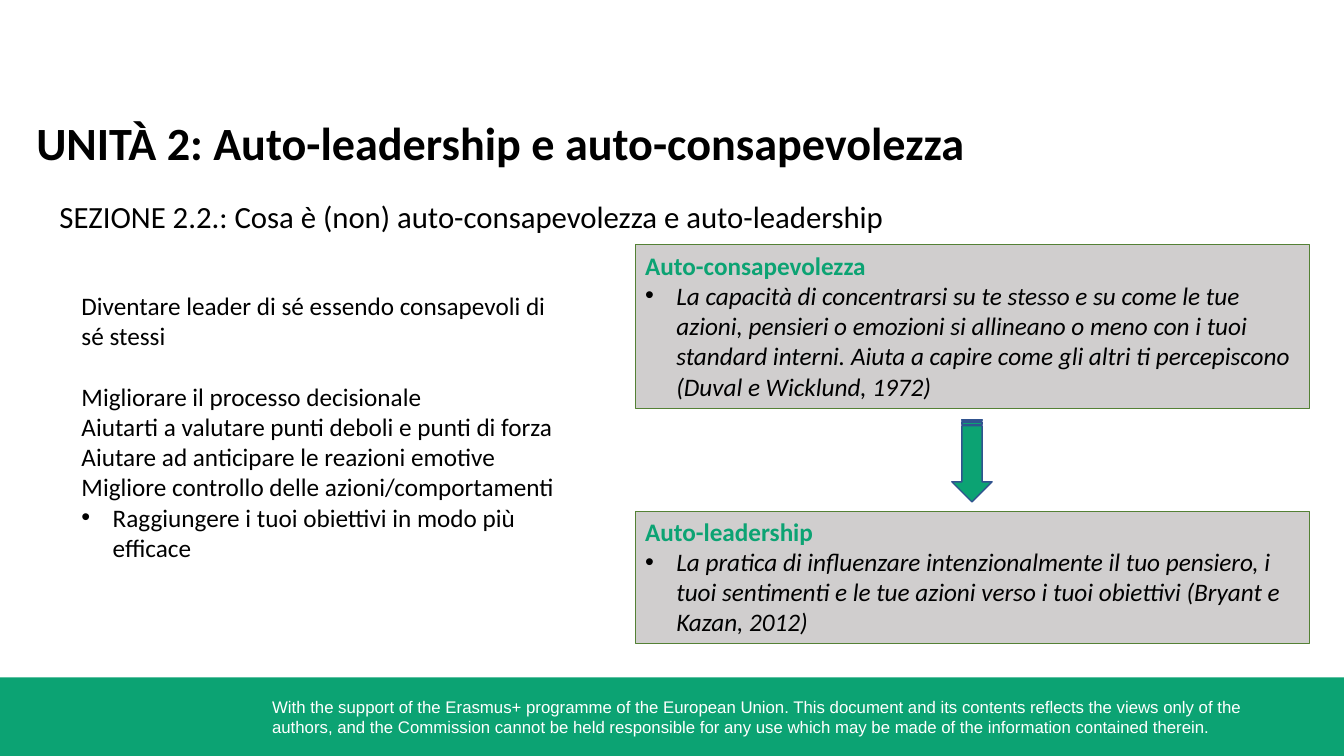
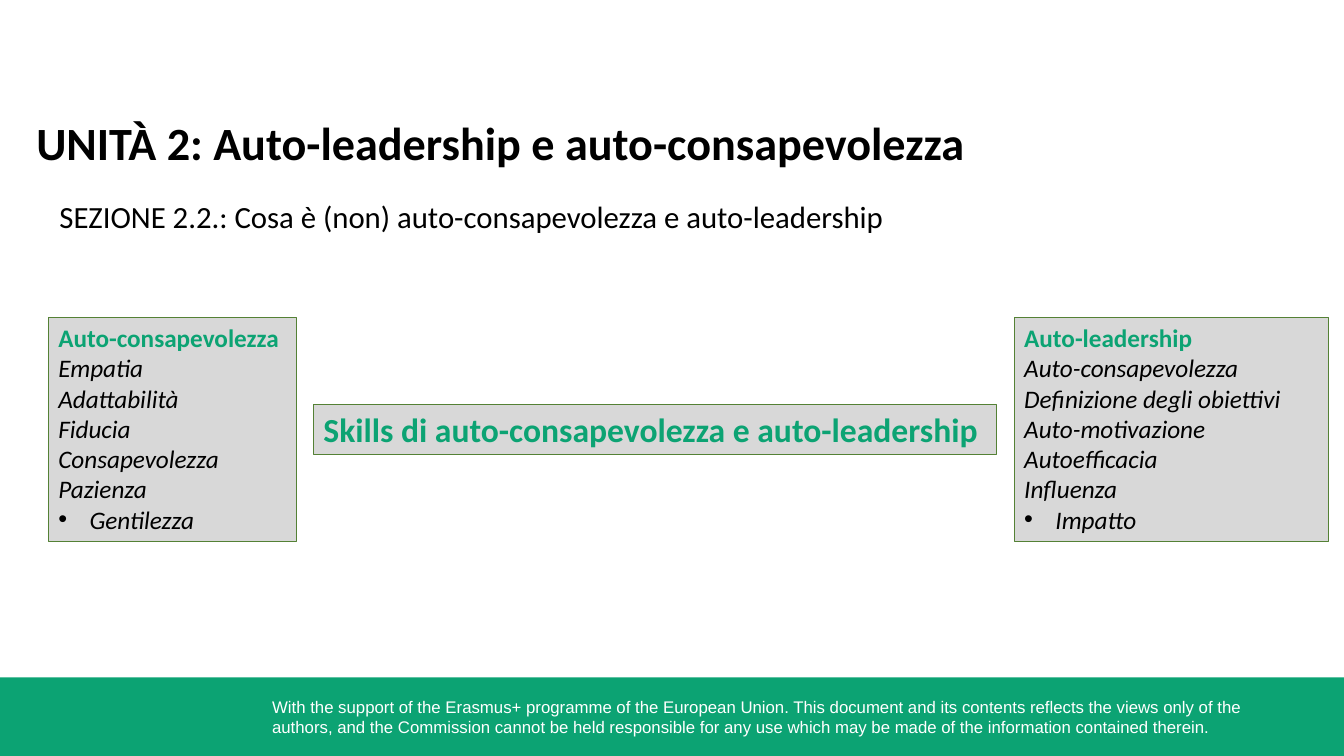
from lxml import etree
from pptx import Presentation
from pptx import util as u
from pptx.dml.color import RGBColor
from pptx.enum import shapes, text
from pptx.oxml.ns import qn

GREEN, BLACK, WHITE = "0CA373", "000000", "FFFFFF"
BOX_BORDER, ARROW_BORDER = "548135", "31538F"
DARK_GREY, LIGHT_GREY = "D0CECE", "D8D8D8"
BOX_INSETS = (0.1, 0.05, 0.1, 0.05)
UNIT = "UNITÀ 2: Auto-leadership e auto-consapevolezza"
SECTION = "SEZIONE 2.2.: Cosa è (non) auto-consapevolezza e auto-leadership"
SUPPORT = (
    "With the support of the Erasmus+ programme of the European Union. "
    "This document and its contents reflects the views only of the authors, "
    "and the Commission cannot be held responsible for any use which may be "
    "made of the information contained therein."
)
BENEFITS = [
    "Migliorare il processo decisionale",
    "Aiutarti a valutare punti deboli e punti di forza",
    "Aiutare ad anticipare le reazioni emotive",
    "Migliore controllo delle azioni/comportamenti",
]
AWARENESS = (
    "La capacità di concentrarsi su te stesso e su come le tue azioni, "
    "pensieri o emozioni si allineano o meno con i tuoi standard interni. "
    "Aiuta a capire come gli altri ti percepiscono (Duval e Wicklund, 1972)"
)
LEADERSHIP = (
    "La pratica di influenzare intenzionalmente il tuo pensiero, i tuoi "
    "sentimenti e le tue azioni verso i tuoi obiettivi (Bryant e Kazan, 2012)"
)
AWARENESS_SKILLS = ["Empatia", "Adattabilità", "Fiducia", "Consapevolezza", "Pazienza"]
LEADERSHIP_SKILLS = [
    "Auto-consapevolezza", "Definizione degli obiettivi", "Auto-motivazione",
    "Autoefficacia", "Influenza",
]


def rgb(value):
    """Turn a hex string into a colour."""
    return RGBColor.from_string(value)


def set_bullet(paragraph):
    """Give a paragraph a round bullet with a hanging indent."""
    props = paragraph._p.get_or_add_pPr()
    props.set("marL", str(u.Inches(0.31)))
    props.set("indent", str(-u.Inches(0.31)))
    etree.SubElement(props, qn("a:buFont")).set("typeface", "Arial")
    etree.SubElement(props, qn("a:buChar")).set("char", "•")


def line(words, size=18, color=BLACK, font="Calibri", bold=False, italic=False,
         bullet=False, before=0):
    """Describe one paragraph of text."""
    return dict(words=words, size=size, color=color, font=font, bold=bold,
                italic=italic, bullet=bullet, before=before)


def write(frame, lines, insets):
    """Fill a text frame with the described paragraphs."""
    frame.word_wrap = True
    frame.vertical_anchor = text.MSO_ANCHOR.TOP
    frame.margin_left, frame.margin_top, frame.margin_right, frame.margin_bottom = map(
        u.Inches, insets)
    for index, item in enumerate(lines):
        paragraph = frame.add_paragraph() if index else frame.paragraphs[0]
        paragraph.alignment = text.PP_ALIGN.LEFT
        if item["before"]:
            paragraph.space_before = u.Pt(item["before"])
        if item["bullet"]:
            set_bullet(paragraph)
        run = paragraph.add_run()
        run.text = item["words"]
        run.font.name = item["font"]
        run.font.size = u.Pt(item["size"])
        run.font.bold = item["bold"]
        run.font.italic = item["italic"]
        run.font.color.rgb = rgb(item["color"])


def add_text(slide, at, lines, insets=BOX_INSETS):
    """Add a plain text box."""
    write(slide.shapes.add_textbox(*map(u.Inches, at)).text_frame, lines, insets)


def add_block(slide, kind, at, fill, border=None, width=0.75):
    """Add a filled preset shape, outlined if a border is given."""
    block = slide.shapes.add_shape(kind, *map(u.Inches, at))
    block.shadow.inherit = False
    block.fill.solid()
    block.fill.fore_color.rgb = rgb(fill)
    if border:
        block.line.color.rgb = rgb(border)
        block.line.width = u.Pt(width)
    else:
        block.line.fill.background()
    return block


def add_panel(slide, at, fill, lines):
    """Add a grey panel with text."""
    panel = add_block(slide, shapes.MSO_SHAPE.RECTANGLE, at, fill, BOX_BORDER)
    write(panel.text_frame, lines, BOX_INSETS)


def heading(words, size=18):
    """Describe a green panel heading."""
    return line(words, size, GREEN, bold=True)


def skill_list(title, skills, last):
    """Describe a heading with its skills, the last one bulleted."""
    return [heading(title), *(line(skill, italic=True) for skill in skills),
            line(last, italic=True, bullet=True)]


def add_unit_slide(deck):
    """Add a slide with the shared footer, title and section."""
    slide = deck.slides.add_slide(deck.slide_layouts[6])
    add_block(slide, shapes.MSO_SHAPE.RECTANGLE, (0, 6.72, 13.33, 0.78), GREEN)
    add_text(slide, (2.6, 6.86, 10.42, 0.5), [line(SUPPORT, 12, WHITE, "Arial")])
    add_text(slide, (0.35, 1.12, 12.25, 0.57), [line(UNIT, 33, bold=True)],
             (0.01, 0.01, 0, 0))
    add_text(slide, (0.58, 1.94, 8.42, 0.76), [line(SECTION, 22)], (0.01, 0.02, 0, 0))
    return slide


def build_definitions(deck):
    """Build the slide that defines the two concepts."""
    slide = add_unit_slide(deck)
    for title, meaning, top, height in (
        ("Auto-consapevolezza", AWARENESS, 2.43, 1.62),
        ("Auto-leadership", LEADERSHIP, 5.07, 1.31),
    ):
        add_panel(slide, (6.3, top, 6.69, height), DARK_GREY,
                  [heading(title), line(meaning, italic=True, bullet=True)])
    arrow = add_block(slide, shapes.MSO_SHAPE.STRIPED_RIGHT_ARROW,
                      (9.23, 4.37, 0.82, 0.4), GREEN, ARROW_BORDER, 1)
    arrow.rotation = 90
    add_text(slide, (0.71, 2.83, 4.92, 3.43), [
        line("Diventare leader di sé essendo consapevoli di sé stessi"),
        *(line(benefit, before=0 if index else 21.6)
          for index, benefit in enumerate(BENEFITS)),
        line("Raggiungere i tuoi obiettivi in modo più efficace", bullet=True),
    ])


def build_skills(deck):
    """Build the slide that lists the skills."""
    slide = add_unit_slide(deck)
    add_panel(slide, (0.48, 3.15, 2.46, 2.22), LIGHT_GREY,
              skill_list("Auto-consapevolezza", AWARENESS_SKILLS, "Gentilezza"))
    add_panel(slide, (3.11, 4.01, 6.77, 0.5), LIGHT_GREY,
              [heading("Skills di auto-consapevolezza e auto-leadership", 24)])
    add_panel(slide, (10.06, 3.15, 3.12, 2.22), LIGHT_GREY,
              skill_list("Auto-leadership", LEADERSHIP_SKILLS, "Impatto"))


def main():
    """Build and save the deck."""
    deck = Presentation()
    deck.slide_width, deck.slide_height = u.Inches(13.33), u.Inches(7.5)
    build_definitions(deck)
    build_skills(deck)
    deck.save("out.pptx")


if __name__ == "__main__":
    main()
